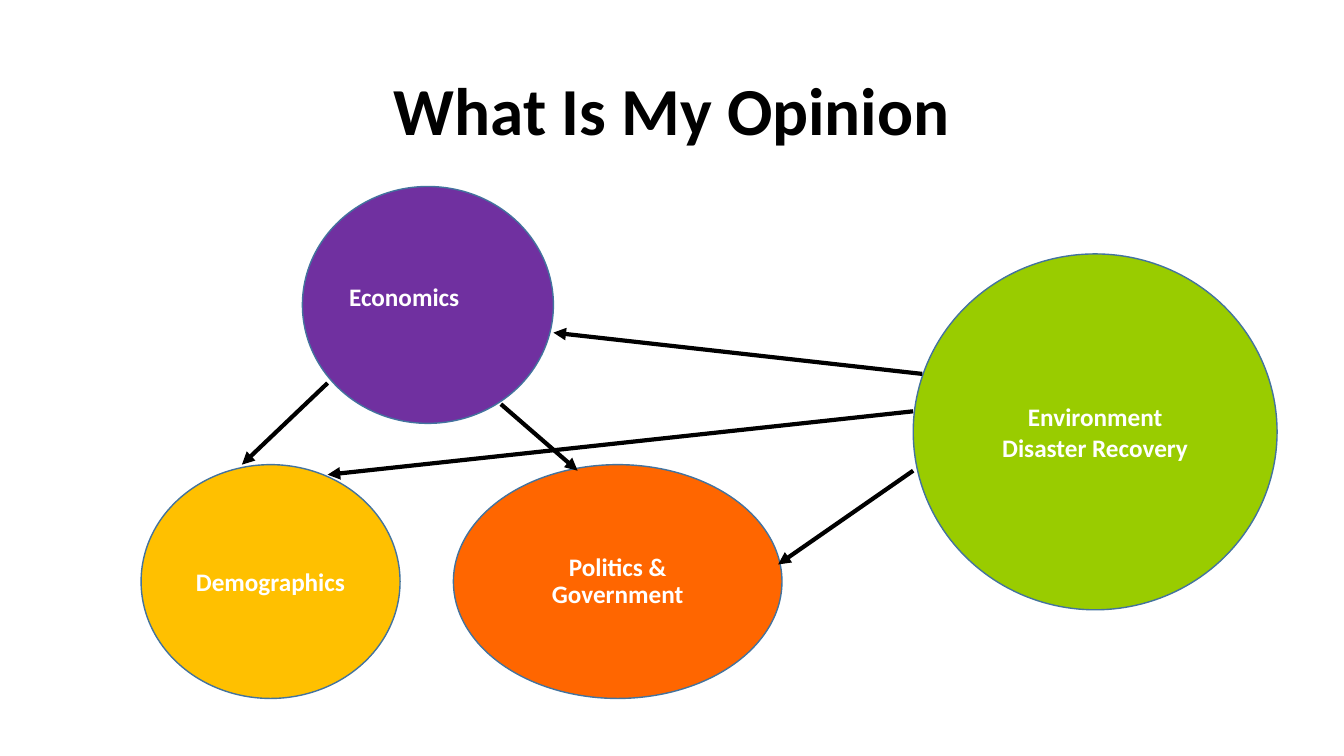
from lxml import etree
from pptx import Presentation
from pptx.dml.color import RGBColor
from pptx.enum import shapes, text
from pptx.oxml import ns
from pptx.util import Pt

BLACK = RGBColor(0x00, 0x00, 0x00)
WHITE = RGBColor(0xFF, 0xFF, 0xFF)
EDGE = RGBColor(0x43, 0x73, 0x9E)
ORANGE = RGBColor(0xFF, 0x66, 0x00)
PURPLE = RGBColor(0x70, 0x30, 0xA0)
GOLD = RGBColor(0xFF, 0xC0, 0x00)
GREEN = RGBColor(0x99, 0xCC, 0x00)

LEFT, MID = text.PP_ALIGN.LEFT, text.PP_ALIGN.CENTER

# box, fill, lines, alignment, line spacing, bottom inset
TOPICS = [
    ((323.9, 331.9, 234.7, 167), ORANGE, ["Politics & Government"], MID, 0.9, 3.6),
    ((216, 133.2, 179.3, 169.2), PURPLE, ["Economics"], LEFT, 0.9, 13.6),
    ((100.8, 331.9, 185, 167), GOLD, ["Demographics"], MID, 1, 3.6),
    ((652.3, 181.4, 259.9, 254.2), GREEN,
     ["Environment", "Disaster Recovery"], MID, 1, 3.6),
]

# start x, start y, end x, end y
ARROWS = [
    (234, 273.6, 172.8, 331.9),
    (357.8, 288.7, 412.6, 336.2),
    (658.8, 267.1, 395.3, 237.6),
    (652.3, 336.2, 555.8, 403.2),
    (652.3, 293.8, 234, 339.1),
]


def write(frame, lines, size, color, align, gap):
    frame.word_wrap = True
    frame.vertical_anchor = text.MSO_ANCHOR.MIDDLE
    para = frame.paragraphs[0]
    para.alignment = align
    para.line_spacing = gap
    for i, line in enumerate(lines):
        if i:
            para.add_line_break()
        run = para.add_run()
        run.text = line
        run.font.name = "Calibri"
        run.font.size = Pt(size)
        run.font.bold = True
        run.font.color.rgb = color


def add_title(slide, box):
    title = slide.shapes.title
    title.left, title.top, title.width, title.height = map(Pt, box)
    write(title.text_frame, ["What Is My Opinion"], 48, BLACK, MID, 0.9)


def add_topic(slide, box, fill, lines, align, gap, inset):
    oval = slide.shapes.add_shape(shapes.MSO_SHAPE.OVAL, *map(Pt, box))
    oval.shadow.inherit = False
    oval.fill.solid()
    oval.fill.fore_color.rgb = fill
    oval.line.color.rgb = EDGE
    oval.line.width = Pt(1)
    oval.text_frame.margin_bottom = Pt(inset)
    write(oval.text_frame, lines, 18, WHITE, align, gap)


def add_arrow(slide, ends):
    arrow = slide.shapes.add_connector(
        shapes.MSO_CONNECTOR.STRAIGHT, *map(Pt, ends))
    arrow.line.color.rgb = BLACK
    arrow.line.width = Pt(3)
    props = arrow.element.spPr
    etree.SubElement(props.find(ns.qn("a:ln")), ns.qn("a:tailEnd"), type="triangle")
    etree.SubElement(props, ns.qn("a:effectLst"))


def main():
    deck = Presentation()
    deck.slide_width, deck.slide_height = Pt(960), Pt(540)
    slide = deck.slides.add_slide(deck.slide_layouts.get_by_name("Title Only"))
    add_title(slide, (66, 28.8, 828, 104.4))
    for topic in TOPICS:
        add_topic(slide, *topic)
    for ends in ARROWS:
        add_arrow(slide, ends)
    deck.save("out.pptx")


if __name__ == "__main__":
    main()
